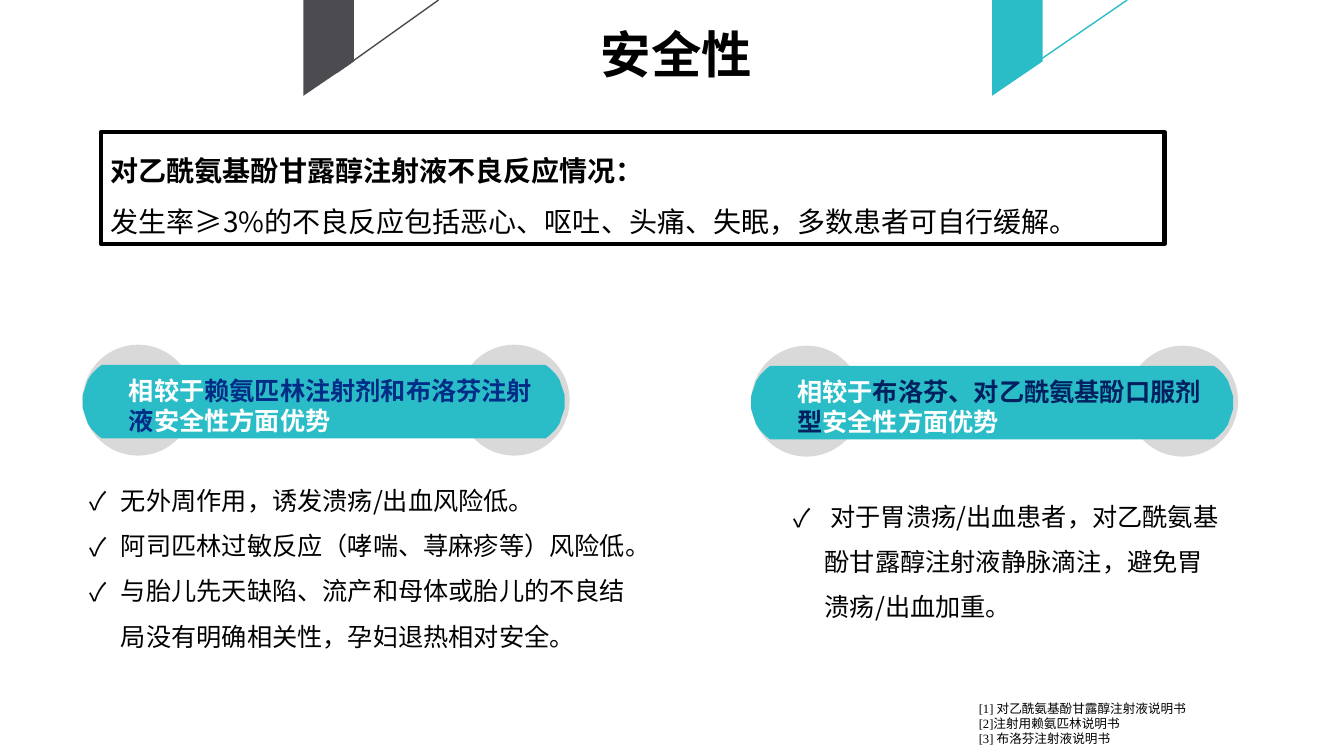
from math import sqrt

from lxml.etree import SubElement
from pptx import Presentation
from pptx.dml.color import RGBColor
from pptx.enum.shapes import MSO_CONNECTOR, MSO_SHAPE
from pptx.enum.text import MSO_ANCHOR, MSO_AUTO_SIZE, PP_ALIGN
from pptx.oxml.ns import qn
from pptx.util import Pt

PX = 9144  # one hundredth of an inch
SANS = "Noto Sans CJK SC"
SERIF = "Times New Roman"
BLACK, WHITE, GREY = "000000", "FFFFFF", "D9D9D9"
TEAL, CHARCOAL, NAVY = "2ABDC7", "4C4B50", "002060"
NAVY_GRADIENT = ("012D86", "0E2557")


def color(value):
    return RGBColor.from_string(value)


def place(shape, left, top, width, height):
    shape.left, shape.top = left * PX, top * PX
    shape.width, shape.height = width * PX, height * PX


def paint(shape, fill):
    """Give the shape a plain fill with no outline and no shadow."""
    shape.shadow.inherit = False
    shape.fill.solid()
    shape.fill.fore_color.rgb = color(fill)
    shape.line.fill.background()


def setup_frame(shape, anchor=MSO_ANCHOR.TOP):
    frame = shape.text_frame
    frame.word_wrap = True
    frame.auto_size = MSO_AUTO_SIZE.SHAPE_TO_FIT_TEXT
    frame.vertical_anchor = anchor
    return frame


def add_run(paragraph, text, size, ink=BLACK, bold=False, face=SANS):
    """Add a run; a pair of colours as ink makes a gradient."""
    run = paragraph.add_run()
    run.text = text
    font = run.font
    font.size, font.bold, font.name = Pt(size), bold, face
    if isinstance(ink, tuple):
        font.fill.gradient()
        font.fill.gradient_angle = 0
        for stop, value in zip(font.fill.gradient_stops, ink):
            stop.color.rgb = color(value)
    else:
        font.color.rgb = color(ink)
    east_asian = SubElement(run._r.get_or_add_rPr(), qn("a:ea"))
    east_asian.set("typeface", SANS)


def add_paragraphs(frame, count, spacing=1.0):
    for index in range(count):
        paragraph = frame.add_paragraph() if index else frame.paragraphs[0]
        paragraph.alignment = PP_ALIGN.LEFT
        paragraph.line_spacing = spacing
        paragraph.space_before = Pt(0)
        yield paragraph


def add_outline(shapes, points, fill):
    builder = shapes.build_freeform(*points[0], scale=PX)
    builder.add_line_segments(points[1:], close=True)
    paint(builder.convert_to_shape(), fill)


def add_ribbon(slide, left, line_start, line_end, ink):
    right = left + 50
    add_outline(slide.shapes, [(left, 0), (right, 0), (right, 61), (left, 95)], ink)
    ends = [value * PX for value in (*line_start, *line_end)]
    connector = slide.shapes.add_connector(MSO_CONNECTOR.STRAIGHT, *ends)
    connector.line.color.rgb = color(ink)
    connector.line.width = Pt(1)
    SubElement(connector._element.spPr, qn("a:effectLst"))


def pill_points(left, top, width, height, radius=45):
    """Follow the two round ends of a bar cut from circles of one radius."""
    heights = [height * step / 24 for step in range(25)]
    insets = [radius - sqrt(radius ** 2 - (y - height / 2) ** 2) for y in heights]
    left_end = [(left + inset, top + y) for inset, y in zip(insets, heights)]
    right_end = [(left + width - inset, top + y) for inset, y in zip(insets, heights)]
    return left_end + right_end[::-1]


def add_heading(slide, left, top, subject, ink):
    group = slide.shapes.add_group_shape()
    for offset in (0, 373):
        circle = group.shapes.add_shape(
            MSO_SHAPE.OVAL, (left + offset) * PX, top * PX, 110 * PX, 110 * PX)
        paint(circle, GREY)
    add_outline(group.shapes, pill_points(left, top + 20, 478, 73), TEAL)
    box = group.shapes.add_textbox(0, 0, 0, 0)
    place(box, left + 36, top + 25, 421, 71)
    paragraph = next(add_paragraphs(setup_frame(box), 1))
    for text, run_ink in (("相较于", WHITE), (subject, ink), ("安全性方面优势", WHITE)):
        add_run(paragraph, text, 18, run_ink, bold=True)


def fill_checklist(placeholder, box, items):
    place(placeholder, *box)
    frame = setup_frame(placeholder)
    for paragraph, item in zip(add_paragraphs(frame, len(items), 1.5), items):
        properties = paragraph._p.get_or_add_pPr()
        properties.set("marL", str(31 * PX))
        properties.set("indent", str(-31 * PX))
        SubElement(properties, qn("a:buFont")).set("typeface", SANS)
        SubElement(properties, qn("a:buChar")).set("char", "✓")
        add_run(paragraph, item, 18)


def add_summary(slide):
    box = slide.shapes.add_shape(MSO_SHAPE.RECTANGLE, 0, 0, 0, 0)
    place(box, 100, 131, 1055, 111)
    box.shadow.inherit = False
    box.fill.background()
    box.line.color.rgb = color(BLACK)
    box.line.width = Pt(3)
    heading, detail = add_paragraphs(setup_frame(box), 2, 1.5)
    add_run(heading, "对乙酰氨基酚甘露醇注射液不良反应情况：", 20, bold=True)
    add_run(detail, "发生率≥3%的不良反应包括恶心、呕吐、头痛、失眠，多数患者可自行缓解。", 20)


def add_references(slide, references):
    box = slide.shapes.add_textbox(0, 0, 0, 0)
    place(box, 961, 690, 356, 55)
    paragraphs = add_paragraphs(setup_frame(box), len(references))
    for paragraph, reference in zip(paragraphs, references):
        add_run(paragraph, reference, 9, face=SERIF)


def main():
    presentation = Presentation()
    presentation.slide_width, presentation.slide_height = 1333 * PX, 750 * PX
    slide = presentation.slides.add_slide(presentation.slide_layouts[3])
    title, left_list, right_list = slide.placeholders

    place(title, 586, 18, 191, 70)
    paragraph = next(add_paragraphs(setup_frame(title), 1))
    add_run(paragraph, "安全性", 36, bold=True)

    add_summary(slide)
    add_ribbon(slide, 301, (334, 72), (435, 0), CHARCOAL)
    add_ribbon(slide, 984, (1016, 70), (1118, 0), TEAL)

    fill_checklist(left_list, (79, 461, 568, 192), [
        "无外周作用，诱发溃疡/出血风险低。",
        "阿司匹林过敏反应（哮喘、荨麻疹等）风险低。",
        "与胎儿先天缺陷、流产和母体或胎儿的不良结局没有明确相关性，孕妇退热相对安全。",
    ])
    fill_checklist(right_list, (777, 477, 446, 146), [
        " 对于胃溃疡/出血患者，对乙酰氨基酚甘露醇注射液静脉滴注，避免胃溃疡/出血加重。",
    ])
    add_heading(slide, 82, 342, "赖氨匹林注射剂和布洛芬注射液", NAVY_GRADIENT)
    add_heading(slide, 745, 343, "布洛芬、对乙酰氨基酚口服剂型", NAVY)
    add_references(slide, [
        "[1] 对乙酰氨基酚甘露醇注射液说明书",
        "[2]注射用赖氨匹林说明书",
        "[3] 布洛芬注射液说明书",
    ])
    presentation.save("out.pptx")


if __name__ == "__main__":
    main()
